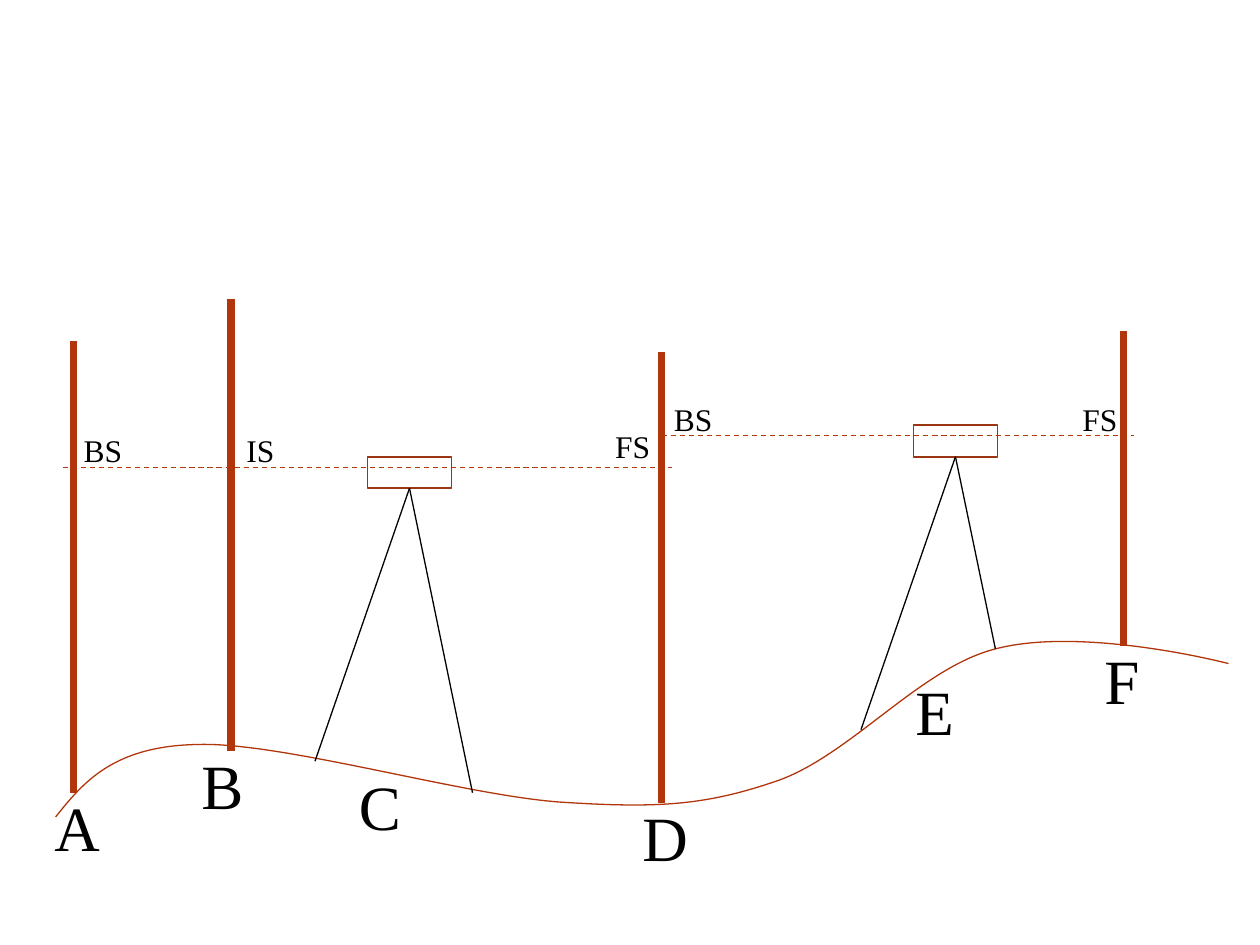
from lxml.etree import SubElement
from pptx import Presentation
from pptx.dml.color import RGBColor
from pptx.enum.dml import MSO_LINE
from pptx.enum.shapes import MSO_CONNECTOR, MSO_SHAPE
from pptx.enum.text import MSO_AUTO_SIZE
from pptx.oxml.ns import qn
from pptx.util import Inches, Pt

COLORS = {"box": "9C3511", "rust": "B1360B", "ink": "000000"}
LETTER = {"size": Pt(36), "name": "Times New Roman"}
READING = {"size": Pt(18), "name": "Times New Roman"}

GROUND = [
    (5.3, 77.8), (8, 74.4), (10.9, 71), (19, 70.9),
    (27, 70.7), (44.4, 75.8), (53.5, 76.4),
    (62.8, 77), (67.3, 76.7), (74.2, 74.3),
    (81.1, 71.8), (87.7, 63.6), (94.8, 61.8),
    (102, 59.9), (113.5, 62.3), (117, 63.2),
]
LEVELS = [
    (35, 43.5, [(45, 75.5), (30, 72.5)]),
    (87, 40.5, [(94.8, 61.8), (82, 69.5)]),
]
STAFFS = [(7, 75.5, 32.5), (63, 76.5, 33.5), (22, 71.5, 28.5), (107, 61.5, 31.5)]
SIGHTS = [(6, 64, 44.5), (63, 108, 41.5)]
STATIONS = [("A", 4, 74.5), ("B", 18, 70.5), ("C", 33, 72.5),
            ("D", 60, 75.5), ("E", 86, 63.5), ("F", 104, 60.5)]
READINGS = [("BS", 6.8, 40.5), ("BS", 63, 37.5), ("IS", 22.3, 40.5),
            ("FS", 57.4, 40.1), ("FS", 101.9, 37.5)]


class Sketch:
    """Draws a levelling sketch on a grid of 120 columns by 90 rows."""

    def __init__(self, prs):
        self.s = prs.slides.add_slide(prs.slide_layouts[6])
        self.unit = prs.slide_width / 120

    def grid(self, *values):
        return [round(v * self.unit) for v in values]

    def stroke(self, sp, color, width, dash=None):
        sp.line.color.rgb = RGBColor.from_string(COLORS[color])
        for key, value in {"width": Pt(width), "dash_style": dash}.items():
            setattr(sp.line, key, value)

    def outline(self, sp, color, width):
        sp.shadow.inherit = False
        sp.fill.background()
        self.stroke(sp, color, width)

    def line(self, start, end, color, width, dash=None):
        sp = self.s.shapes.add_connector(MSO_CONNECTOR.STRAIGHT, *self.grid(*start, *end))
        self.stroke(sp, color, width, dash)
        SubElement(sp._element.spPr, qn("a:effectLst"))
        return sp

    def level(self, col, row, feet):
        box = self.s.shapes.add_shape(MSO_SHAPE.RECTANGLE, *self.grid(col, row, 8, 3))
        self.outline(box, "box", 1)
        for foot in feet:
            leg = self.line((col + 4, row + 3), foot, "ink", 0.75)
            leg.begin_connect(box, 2)

    def curve(self, points):
        start, *rest = [self.grid(*point) for point in points]
        fb = self.s.shapes.build_freeform(*start)
        fb.add_line_segments(rest, close=False)
        sp = fb.convert_to_shape()
        self.outline(sp, "rust", 0.75)
        path = next(sp._element.iter(qn("a:path")))
        segments = path.findall(qn("a:lnTo"))
        for i in range(0, len(segments), 3):
            bezier = SubElement(path, qn("a:cubicBezTo"))
            for segment in segments[i:i + 3]:
                bezier.append(segment[0])
                path.remove(segment)

    def label(self, text, col, row, cols, rows, style):
        sp = self.s.shapes.add_textbox(*self.grid(col, row, cols, rows))
        tf = sp.text_frame
        for key, value in {"word_wrap": True, "auto_size": MSO_AUTO_SIZE.SHAPE_TO_FIT_TEXT}.items():
            setattr(tf, key, value)
        r = tf.paragraphs[0].add_run()
        r.text = text
        for key, value in style.items():
            setattr(r.font, key, value)
        r.font.color.rgb = RGBColor.from_string(COLORS["ink"])


def main():
    prs = Presentation()
    prs.slide_width, prs.slide_height = Inches(10), Inches(7.5)
    sketch = Sketch(prs)
    sketch.curve(GROUND)
    for level in LEVELS:
        sketch.level(*level)
    for col, foot, top in STAFFS:
        sketch.line((col, foot), (col, top), "rust", 4.5)
    for left, right, row in SIGHTS:
        sketch.line((left, row), (right, row), "rust", 0.75, MSO_LINE.DASH)
    for station in STATIONS:
        sketch.label(*station, 8, 8.5, LETTER)
    for reading in READINGS:
        sketch.label(*reading, 7, 5, READING)
    prs.save("out.pptx")


if __name__ == "__main__":
    main()
